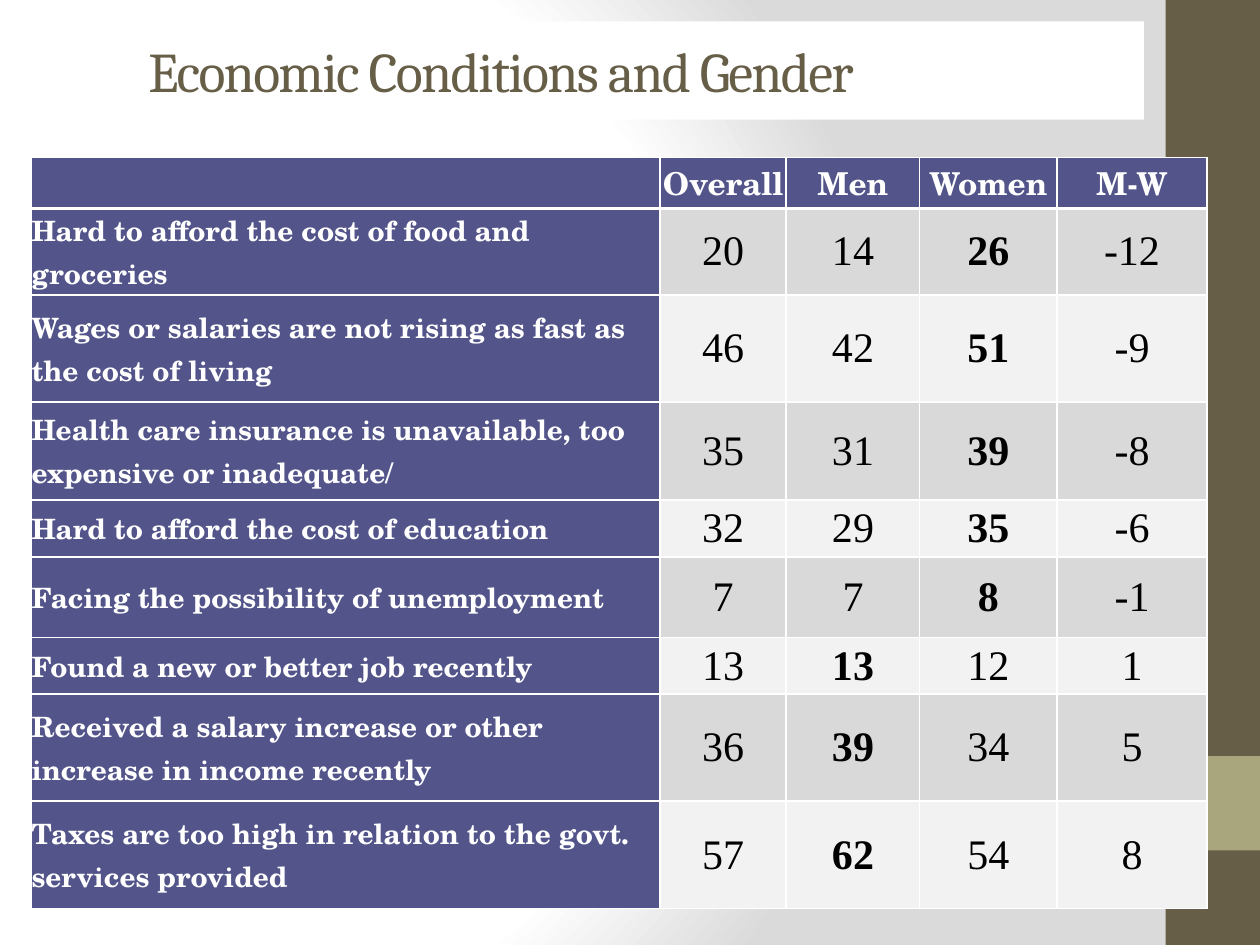
import lxml.etree
import pptx
import pptx.dml.color
import pptx.enum.shapes
import pptx.enum.text
import pptx.oxml.ns
import pptx.util

Inches = pptx.util.Inches
Pt = pptx.util.Pt
qn = pptx.oxml.ns.qn
ALIGN = pptx.enum.text.PP_ALIGN
MIDDLE = pptx.enum.text.MSO_ANCHOR.MIDDLE

TITLE = "Economic Conditions and Gender"
HEADINGS = ["", "Overall", "Men", "Women", "M-W"]
# condition, overall, men, women, row height
CONDITIONS = [
    ("Hard to afford the cost of food and groceries", 20, 14, 26, 0.68),
    ("Wages or salaries are not rising as fast as the cost of living", 46, 42, 51, 0.85),
    ("Health care insurance is unavailable, too expensive or inadequate/", 35, 31, 39, 0.78),
    ("Hard to afford the cost of education", 32, 29, 35, 0.45),
    ("Facing the possibility of unemployment", 7, 7, 8, 0.64),
    ("Found a new or better job recently", 13, 13, 12, 0.45),
    ("Received a salary increase or other increase in income recently", 36, 39, 34, 0.85),
    ("Taxes are too high in relation to the govt. services provided", 57, 62, 54, 0.85),
]
COLUMN_WIDTHS = [4.99, 1, 1.06, 1.09, 1.19]
HEADER_HEIGHT = 0.4

THEME = {
    "brown": "675E47", "olive": "A9A57C", "white": "FFFFFF", "black": "000000",
    "label": "53548A", "bands": ["D9D9D9", "F2F2F2"],
    "backdrop": [(0, "FFFFFF"), (75, "FFFFFF"), (100, "DADADA")],
    "title": ("Cambria", 32), "heading": ("TeX Gyre Schola", 18),
    "condition": ("TeX Gyre Schola", 16), "figure": ("Times New Roman", 24),
}


def rgb(color):
    return pptx.dml.color.RGBColor.from_string(color)


def add_element(parent, tag, **attributes):
    return lxml.etree.SubElement(parent, qn(tag), attributes)


def paint_backdrop(slide):
    """Radial gradient, centred left of the middle of the slide."""
    slide.background.fill.gradient()
    gradient = next(slide.background._cSld.iter(qn("a:gradFill")))
    for child in list(gradient):
        gradient.remove(child)
    stops = add_element(gradient, "a:gsLst")
    for position, color in THEME["backdrop"]:
        stop = add_element(stops, "a:gs", pos=str(position * 1000))
        add_element(stop, "a:srgbClr", val=color)
    circle = add_element(gradient, "a:path", path="circle")
    add_element(circle, "a:fillToRect", l="20000", t="50000", r="100000", b="50000")


def add_block(slide, left, top, width, height, color):
    block = slide.shapes.add_shape(
        pptx.enum.shapes.MSO_SHAPE.RECTANGLE, *map(Inches, (left, top, width, height)))
    block.shadow.inherit = False
    block.fill.solid()
    block.fill.fore_color.rgb = rgb(color)
    block.line.fill.background()
    return block


def write(frame, text, style, color, bold=False, align=ALIGN.LEFT):
    paragraph = frame.paragraphs[0]
    paragraph.alignment = align
    run = paragraph.add_run()
    run.text = text
    run.font.name, size = THEME[style]
    run.font.size = Pt(size)
    run.font.bold = bold
    run.font.color.rgb = rgb(color)
    return run


def style_cell(cell, color, top=1, bottom=1):
    """Fill the cell and draw white borders; top and bottom are in points."""
    cell.fill.solid()
    cell.fill.fore_color.rgb = rgb(color)
    cell.vertical_anchor = MIDDLE
    properties = cell._tc.get_or_add_tcPr()
    borders = [("a:lnL", 1), ("a:lnR", 1), ("a:lnT", top), ("a:lnB", bottom)]
    for position, (tag, width) in enumerate(borders):
        border = add_element(properties, tag, w=str(Pt(width)))
        add_element(add_element(border, "a:solidFill"), "a:srgbClr", val=THEME["white"])
        properties.insert(position, border)


def write_cell(cell, *text_style):
    cell.margin_left = cell.margin_right = cell.margin_top = cell.margin_bottom = 0
    write(cell.text_frame, *text_style)


def add_title(slide):
    title = add_block(slide, 1.08, 0.17, 8, 0.78, THEME["white"])
    title.text_frame.word_wrap = True
    title.text_frame.vertical_anchor = MIDDLE
    run = write(title.text_frame, TITLE, "title", THEME["brown"])
    run.font._element.set("spc", "-100")


def add_conditions_table(slide):
    heights = [HEADER_HEIGHT] + [condition[-1] for condition in CONDITIONS]
    table = slide.shapes.add_table(
        len(heights), len(HEADINGS), Inches(0.25), Inches(1.25),
        Inches(sum(COLUMN_WIDTHS)), Inches(sum(heights))).table
    table.first_row = table.horz_banding = False
    for column, width in zip(table.columns, COLUMN_WIDTHS):
        column.width = Inches(width)
    for row, height in zip(table.rows, heights):
        row.height = Inches(height)

    for column, heading in enumerate(HEADINGS):
        cell = table.cell(0, column)
        style_cell(cell, THEME["label"], bottom=1.5)
        if heading:
            write_cell(cell, heading, "heading", THEME["white"], True, ALIGN.CENTER)

    for row, (condition, overall, men, women, _) in enumerate(CONDITIONS, start=1):
        top = 1.5 if row == 1 else 1
        label = table.cell(row, 0)
        style_cell(label, THEME["label"], top)
        write_cell(label, condition, "condition", THEME["white"], True)
        figures = [(overall, False), (men, men > women),
                   (women, women > men), (men - women, False)]
        for column, (figure, bold) in enumerate(figures, start=1):
            cell = table.cell(row, column)
            style_cell(cell, THEME["bands"][(row - 1) % 2], top)
            write_cell(cell, str(figure), "figure", THEME["black"], bold, ALIGN.CENTER)


def main():
    deck = pptx.Presentation()
    deck.slide_width, deck.slide_height = Inches(10), Inches(7.5)
    slide = deck.slides.add_slide(deck.slide_layouts[6])
    paint_backdrop(slide)
    add_block(slide, 9.25, 0, 0.75, 7.5, THEME["brown"])
    add_block(slide, 9.25, 6, 0.75, 0.75, THEME["olive"])
    add_title(slide)
    add_conditions_table(slide)
    deck.save("out.pptx")


if __name__ == "__main__":
    main()
